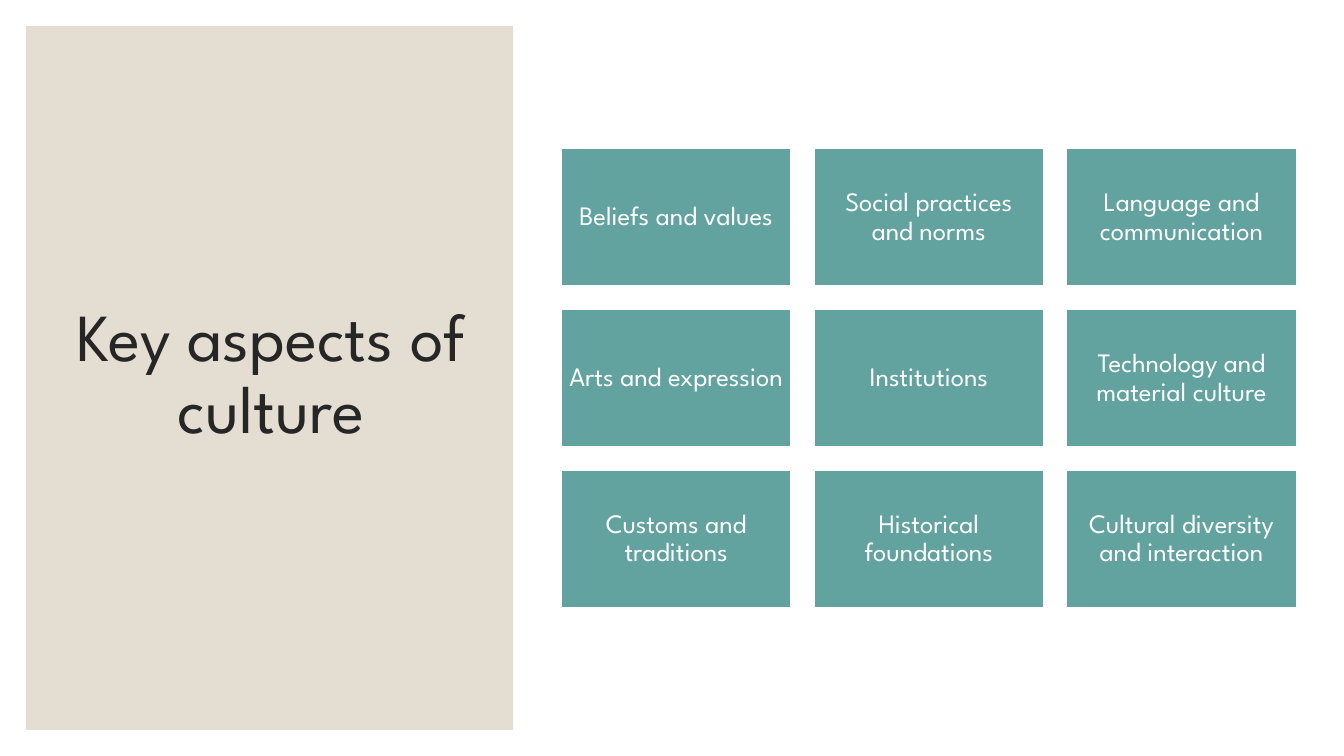
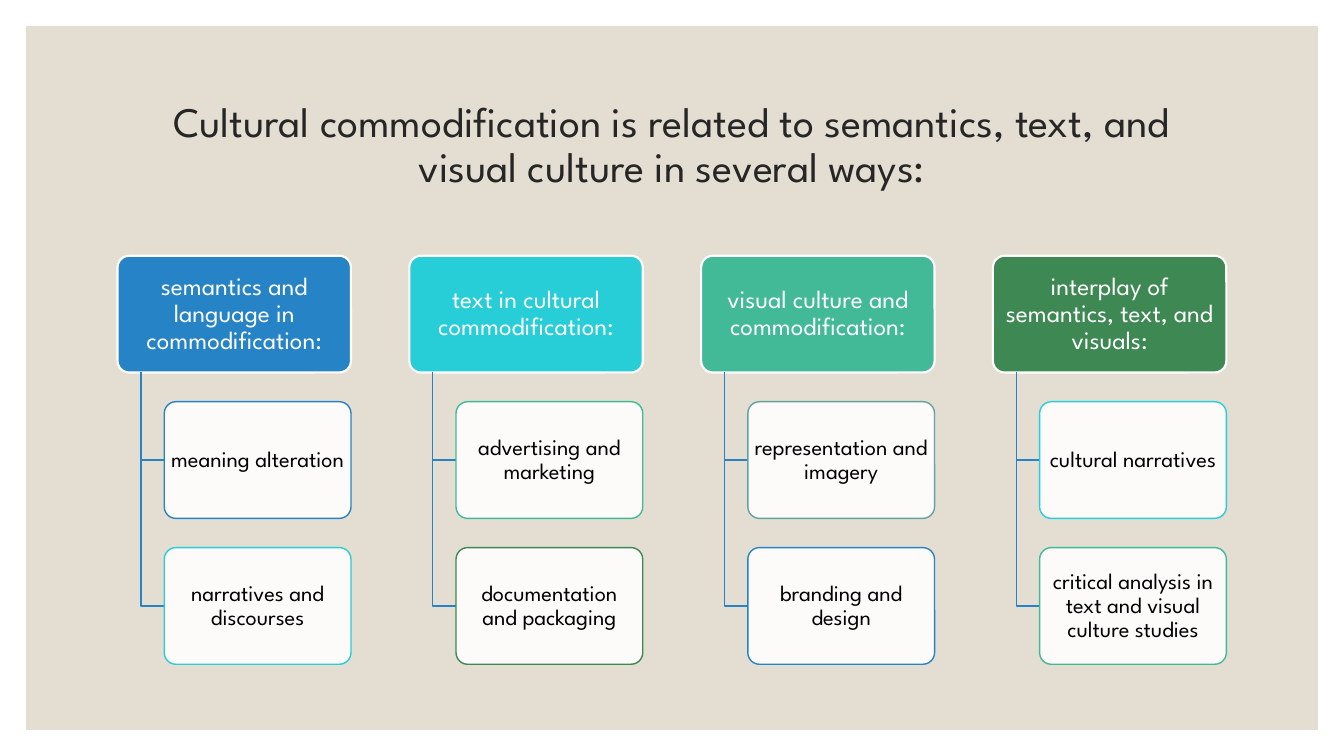
from lxml.etree import SubElement
from pptx import Presentation
from pptx.dml.color import RGBColor
from pptx.enum.shapes import MSO_SHAPE
from pptx.enum.text import MSO_ANCHOR, PP_ALIGN
from pptx.oxml.ns import qn
from pptx.util import Pt

FONT = "League Spartan"
WHITE, BLACK, INK, SAND = "FFFFFF", "000000", "262626", "E3DED1"
BLUE, CYAN, MINT, GREEN, TEAL = "2683C6", "27CED7", "42BA97", "3E8853", "62A39F"
MARGIN = 18.7
PANEL_HEIGHT = 502.6

TITLE_INSETS = (7.2, 3.6)
TILE = {"size": 19, "color": WHITE, "insets": (5.7, 5.7)}
HEAD = {"size": 18, "color": WHITE, "insets": (2.7, 1.8)}
ITEM = {"size": 16, "color": BLACK, "insets": (2, 1.6)}

ASPECTS = [
    "Beliefs and values", "Social practices and norms",
    "Language and communication", "Arts and expression", "Institutions",
    "Technology and material culture", "Customs and traditions",
    "Historical foundations", "Cultural diversity and interaction",
]

WAYS = [
    ("semantics and language in commodification:", BLUE,
     [("meaning alteration", BLUE), ("narratives and discourses", CYAN)]),
    ("text in cultural commodification:", CYAN,
     [("advertising and marketing", MINT),
      ("documentation and packaging", GREEN)]),
    ("visual culture and commodification:", MINT,
     [("representation and imagery", TEAL), ("branding and design", BLUE)]),
    ("interplay of semantics, text, and visuals:", GREEN,
     [("cultural narratives", CYAN),
      ("critical analysis in text and visual culture studies", MINT)]),
]


def rgb(value):
    return RGBColor.from_string(value)


def set_all(target, values):
    for name, value in values.items():
        setattr(target, name, value)


def write(sp, text, size, color, insets):
    tf = sp.text_frame
    side, top = (Pt(v) for v in insets)
    set_all(tf, {"word_wrap": True, "vertical_anchor": MSO_ANCHOR.MIDDLE,
                 "margin_left": side, "margin_right": side,
                 "margin_top": top, "margin_bottom": top})
    p = tf.paragraphs[0]
    set_all(p, {"alignment": PP_ALIGN.CENTER, "line_spacing": 0.9})
    r = p.add_run()
    r.text = text
    set_all(r.font, {"name": FONT, "size": Pt(size)})
    r.font.color.rgb = rgb(color)


def style_line(sp, color, width):
    sp.line.color.rgb = rgb(color)
    sp.line.width = Pt(width)


def add_box(s, box, fill, line=None, width=1, rounded=False, opacity=100):
    kind = MSO_SHAPE.ROUNDED_RECTANGLE if rounded else MSO_SHAPE.RECTANGLE
    sp = s.shapes.add_shape(kind, *map(Pt, box))
    sp.shadow.inherit = False
    if rounded:
        sp.adjustments[0] = 0.1
    sp.fill.solid()
    sp.fill.fore_color.rgb = rgb(fill)
    if opacity < 100:
        tint = sp.fill._xPr.find(qn("a:solidFill"))[0]
        SubElement(tint, qn("a:alpha")).set("val", str(opacity * 1000))
    if line:
        style_line(sp, line, width)
    else:
        sp.line.fill.background()
    return sp


def add_elbow(s, x, y, end_x, end_y):
    builder = s.shapes.build_freeform(Pt(x), Pt(y))
    builder.add_line_segments(
        [(Pt(x), Pt(end_y)), (Pt(end_x), Pt(end_y))], close=False)
    sp = builder.convert_to_shape()
    sp.shadow.inherit = False
    sp.fill.background()
    style_line(sp, BLUE, 1)


def start_slide(prs, panel_width, title, title_box, title_size):
    s = prs.slides.add_slide(prs.slide_layouts[6])
    add_box(s, (MARGIN, MARGIN, panel_width, PANEL_HEIGHT), SAND)
    sp = s.shapes.add_textbox(*map(Pt, title_box))
    write(sp, title, title_size, INK, TITLE_INSETS)
    return s


def add_tile_grid(s, left, top, width, labels, columns=3):
    tile_w = width / (columns + 0.1 * (columns - 1))
    tile_h, gap = 0.6 * tile_w, 0.1 * tile_w
    for i, label in enumerate(labels):
        row, column = divmod(i, columns)
        box = (left + column * (tile_w + gap), top + row * (tile_h + gap),
               tile_w, tile_h)
        write(add_box(s, box, TEAL, WHITE), label, **TILE)


def add_branch(s, left, top, width, heading, color, items):
    height = width / 2
    sp = add_box(s, (left, top, width, height), color, WHITE, 1.5, True)
    write(sp, heading, **HEAD)
    item_x = left + 0.2 * width
    for i, (label, line) in enumerate(items, 1):
        item_y = top + i * 1.25 * height
        add_elbow(s, left + 0.1 * width, top + height,
                  item_x, item_y + height / 2)
        box = (item_x, item_y, 0.8 * width, height)
        sp = add_box(s, box, WHITE, line, rounded=True, opacity=90)
        write(sp, label, **ITEM)


def add_branches(s, left, top, width, branches):
    count = len(branches)
    branch_w = width / (count + 0.25 * (count - 1))
    for i, branch in enumerate(branches):
        add_branch(s, left + i * 1.25 * branch_w, top, branch_w, *branch)


def main():
    prs = Presentation()
    set_all(prs, {"slide_width": Pt(960), "slide_height": Pt(540)})

    s = start_slide(prs, 347.8, "Key aspects of culture",
                    (45.4, 43.9, 296.6, 449.3), 48)
    add_tile_grid(s, 401, 106, 525, ASPECTS)

    s = start_slide(
        prs, 922.6,
        "Cultural commodification is related to semantics, text, and "
        "visual culture in several ways:",
        (84, 50.4, 792, 108), 30)
    add_branches(s, 84, 182.7, 792, WAYS)

    prs.save("out.pptx")


if __name__ == "__main__":
    main()
